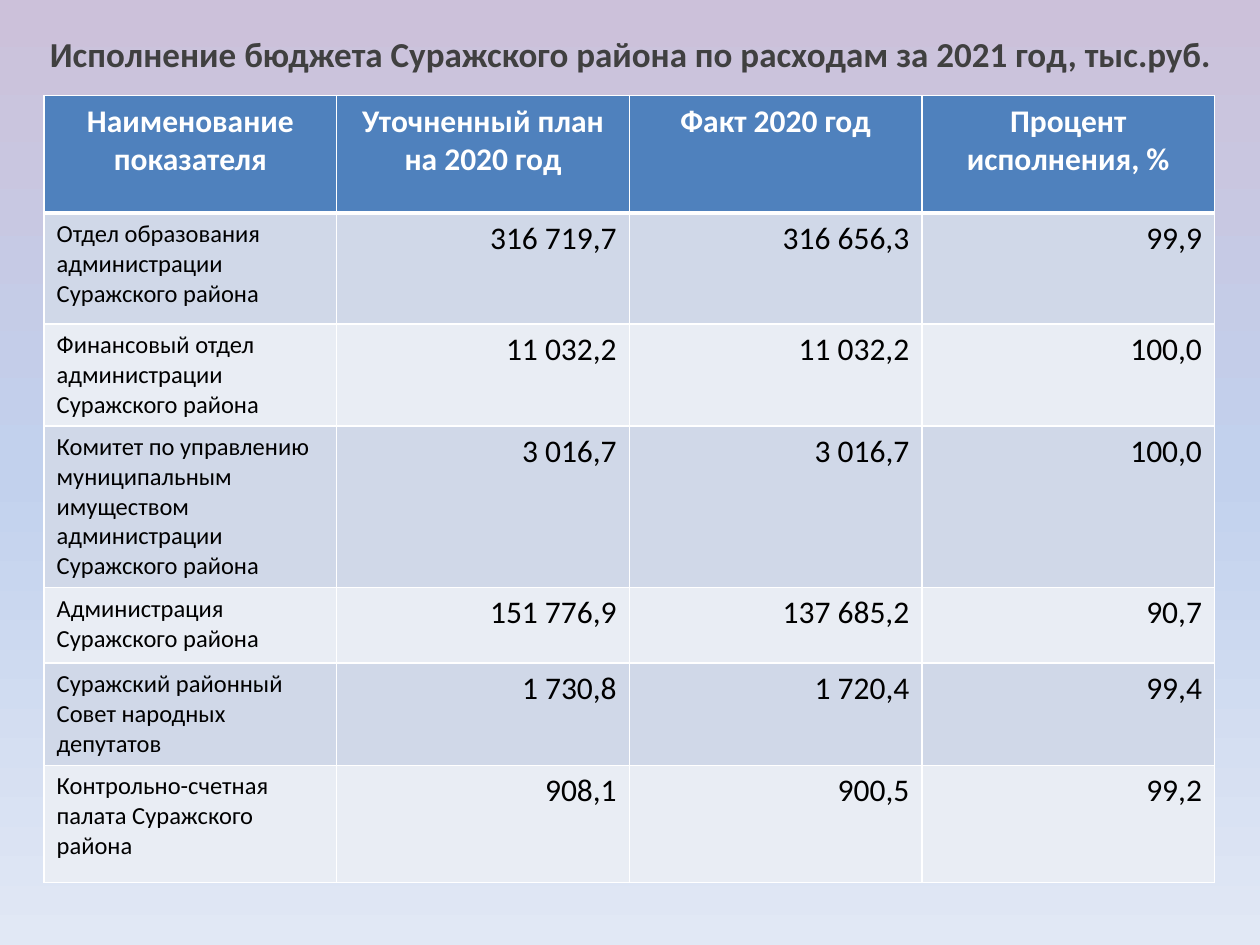
from lxml.etree import SubElement
from pptx import Presentation
from pptx.dml.color import RGBColor
from pptx.enum.text import MSO_ANCHOR, MSO_AUTO_SIZE, PP_ALIGN
from pptx.oxml.ns import qn
from pptx.util import Inches, Pt

TITLE = "Исполнение бюджета Суражского района по расходам за 2021 год, тыс.руб."
HEADS = ["Наименование показателя", "Уточненный план на 2020 год",
         "Факт 2020 год", "Процент исполнения, %"]
ROWS = [
    ("Отдел образования администрации Суражского района",
     "316 719,7", "316 656,3", "99,9"),
    ("Финансовый отдел администрации Суражского района",
     "11 032,2", "11 032,2", "100,0"),
    ("Комитет по управлению муниципальным имуществом администрации Суражского района",
     "3 016,7", "3 016,7", "100,0"),
    ("Администрация\nСуражского района", "151 776,9", "137 685,2", "90,7"),
    ("Суражский районный Совет народных депутатов",
     "1 730,8", "1 720,4", "99,4"),
    ("Контрольно-счетная палата Суражского района",
     "908,1", "900,5", "99,2"),
]
HEIGHTS = [0.93, 0.88, 0.74, 0.75, 0.6, 0.63, 0.93]
THEME = {
    "font": "Calibri",
    "title": (20, "404040", True),
    "head": (18, "FFFFFF", True),
    "name": (14, "000000", False),
    "value": (18, "000000", False),
    "headfill": "4F81BD",
    "bands": ["D0D8E8", "E9EDF4"],
    "rule": "FFFFFF",
    "back": [(0, "CCC1DA"), (50, "C2D1ED"), (100, "E1E8F5")],
}


def write(frame, text, style, align):
    size, color, bold = THEME[style]
    for i, line in enumerate(text.split("\n")):
        para = frame.add_paragraph() if i else frame.paragraphs[0]
        para.alignment = align
        run = para.add_run()
        run.text = line
        font = run.font
        font.name, font.size, font.bold = THEME["font"], Pt(size), bold
        font.color.rgb = RGBColor.from_string(color)


def border(cell, top, bottom):
    props = cell._tc.get_or_add_tcPr()
    for side, width in zip("LRTB", (1, 1, top, bottom)):
        line = SubElement(props, qn(f"a:ln{side}"), w=str(Pt(width)))
        fill = SubElement(line, qn("a:solidFill"))
        SubElement(fill, qn("a:srgbClr"), val=THEME["rule"])


def paint(slide):
    """Give the slide its vertical gradient background."""
    fill = slide.background.fill
    fill.gradient()
    fill.gradient_angle = 270
    stops = next(slide.background._cSld.iter(qn("a:gsLst")))
    for stop in list(stops):
        stops.remove(stop)
    for pos, color in THEME["back"]:
        stop = SubElement(stops, qn("a:gs"), pos=str(pos * 1000))
        SubElement(stop, qn("a:srgbClr"), val=color)


def add_title(slide):
    title = slide.shapes.title
    title.left, title.top = Inches(0.28), Inches(0.21)
    title.width, title.height = Inches(9.45), Inches(0.55)
    frame = title.text_frame
    frame.word_wrap = True
    frame.auto_size = MSO_AUTO_SIZE.NONE
    frame.vertical_anchor = MSO_ANCHOR.TOP
    write(frame, TITLE, "title", PP_ALIGN.CENTER)


def add_budget(slide):
    data = [HEADS, *ROWS]
    table = slide.shapes.add_table(
        len(data), len(HEADS), Inches(0.35), Inches(0.76),
        Inches(9.29), Inches(sum(HEIGHTS))).table
    for r, (row, high) in enumerate(zip(data, HEIGHTS)):
        table.rows[r].height = Inches(high)
        color = THEME["bands"][(r - 1) % 2] if r else THEME["headfill"]
        for c, text in enumerate(row):
            if r == 0:
                style, align = "head", PP_ALIGN.CENTER
            elif c == 0:
                style, align = "name", PP_ALIGN.LEFT
            else:
                style, align = "value", PP_ALIGN.RIGHT
            cell = table.cell(r, c)
            border(cell, 3 if r == 1 else 1, 3 if r == 0 else 1)
            cell.fill.solid()
            cell.fill.fore_color.rgb = RGBColor.from_string(color)
            write(cell.text_frame, text, style, align)


def main():
    deck = Presentation()
    deck.slide_width, deck.slide_height = Inches(10), Inches(7.5)
    slide = deck.slides.add_slide(deck.slide_layouts[5])
    paint(slide)
    add_title(slide)
    add_budget(slide)
    deck.save("out.pptx")


if __name__ == "__main__":
    main()
